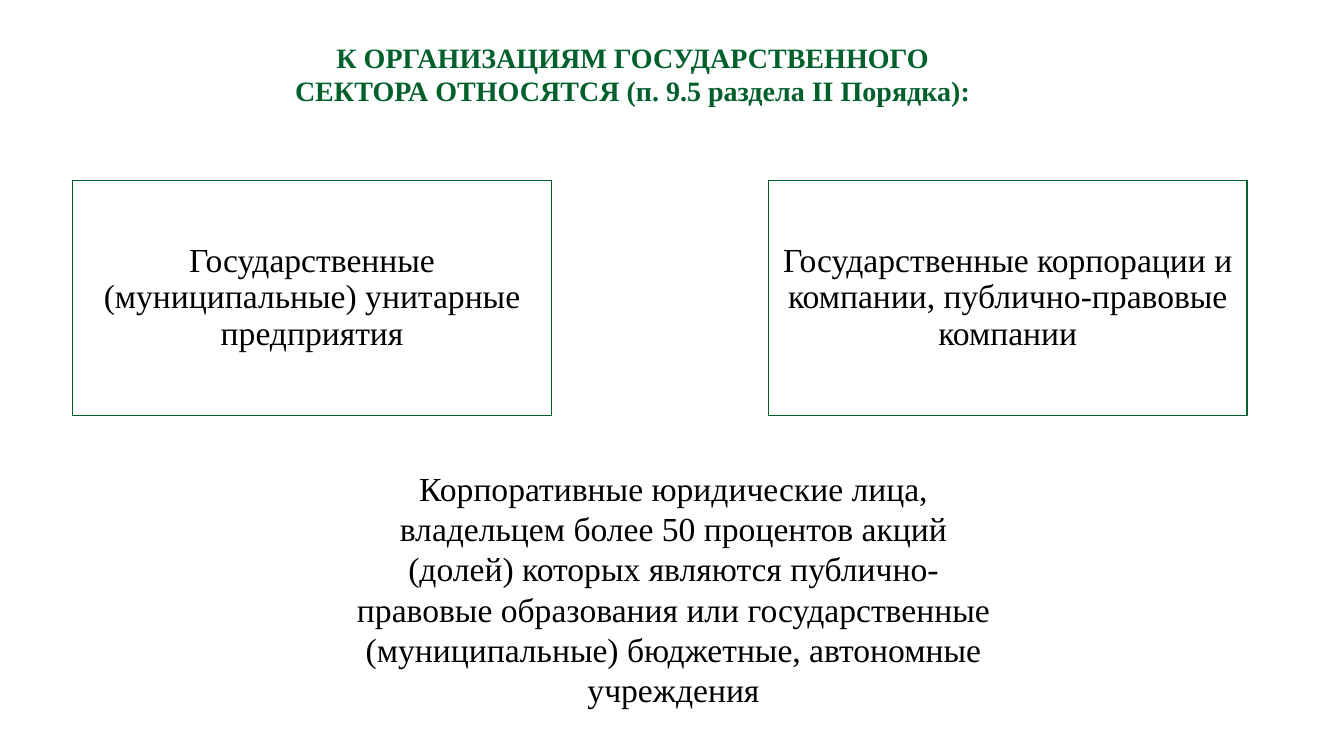
from pptx import Presentation
from pptx.dml.color import RGBColor
from pptx.enum.shapes import MSO_SHAPE
from pptx.enum.text import MSO_ANCHOR, MSO_AUTO_SIZE, PP_ALIGN
from pptx.util import Inches, Pt

GREEN = RGBColor(0x00, 0x60, 0x2B)
BLACK = RGBColor(0x00, 0x00, 0x00)
WHITE = RGBColor(0xFF, 0xFF, 0xFF)

TITLE_ONLY = 5


class SectorSlide:
    """Adds styled elements to one title-only slide."""

    font = "Times New Roman"
    body_size = 24
    title_size = 20

    def __init__(self, deck):
        self.slide = deck.slides.add_slide(deck.slide_layouts[TITLE_ONLY])

    def fill_text(self, frame, text, size, color=BLACK, bold=False,
                  anchor=MSO_ANCHOR.TOP, spacing=1.0):
        frame.word_wrap = True
        frame.vertical_anchor = anchor
        paragraph = frame.paragraphs[0]
        paragraph.alignment = PP_ALIGN.CENTER
        paragraph.line_spacing = spacing
        run = paragraph.add_run()
        run.text = text
        run.font.name = self.font
        run.font.size = Pt(size)
        run.font.bold = bold
        run.font.color.rgb = color

    def title(self, text, left, top, width, height):
        heading = self.slide.shapes.title
        heading.left, heading.top = Inches(left), Inches(top)
        heading.width, heading.height = Inches(width), Inches(height)
        heading.text_frame.auto_size = MSO_AUTO_SIZE.SHAPE_TO_FIT_TEXT
        self.fill_text(heading.text_frame, text, self.title_size, GREEN, bold=True)

    def box(self, text, left, top, width, height, inset=0.09):
        card = self.slide.shapes.add_shape(
            MSO_SHAPE.RECTANGLE,
            Inches(left), Inches(top), Inches(width), Inches(height))
        card.shadow.inherit = False
        card.fill.solid()
        card.fill.fore_color.rgb = WHITE
        card.line.color.rgb = GREEN
        card.line.width = Pt(1)
        frame = card.text_frame
        frame.margin_left = frame.margin_right = Inches(inset)
        frame.margin_top = frame.margin_bottom = Inches(inset)
        self.fill_text(frame, text, self.body_size,
                       anchor=MSO_ANCHOR.MIDDLE, spacing=0.9)

    def text(self, text, left, top, width, height):
        area = self.slide.shapes.add_textbox(
            Inches(left), Inches(top), Inches(width), Inches(height))
        area.text_frame.auto_size = MSO_AUTO_SIZE.SHAPE_TO_FIT_TEXT
        self.fill_text(area.text_frame, text, self.body_size)


def main():
    deck = Presentation()
    deck.slide_width, deck.slide_height = Inches(13.33), Inches(7.5)
    sector = SectorSlide(deck)

    # Heading
    sector.title(
        "К ОРГАНИЗАЦИЯМ ГОСУДАРСТВЕННОГО СЕКТОРА ОТНОСЯТСЯ "
        "(п. 9.5 раздела II Порядка):", 2.55, 0.35, 7.45, 0.77)

    # Two framed kinds of organisation, side by side
    organisations = (
        "Государственные (муниципальные) унитарные предприятия",
        "Государственные корпорации и компании, публично-правовые компании",
    )
    first_left, step = 0.72, 6.9
    for column, organisation in enumerate(organisations):
        sector.box(organisation, first_left + column * step, 1.79, 4.75, 2.33)

    # Third kind, unframed
    sector.text(
        "Корпоративные юридические лица, владельцем более 50 процентов акций "
        "(долей) которых являются публично-правовые образования или "
        "государственные (муниципальные) бюджетные, автономные учреждения",
        3.36, 4.59, 6.64, 2.52)

    deck.save("out.pptx")


if __name__ == "__main__":
    main()
